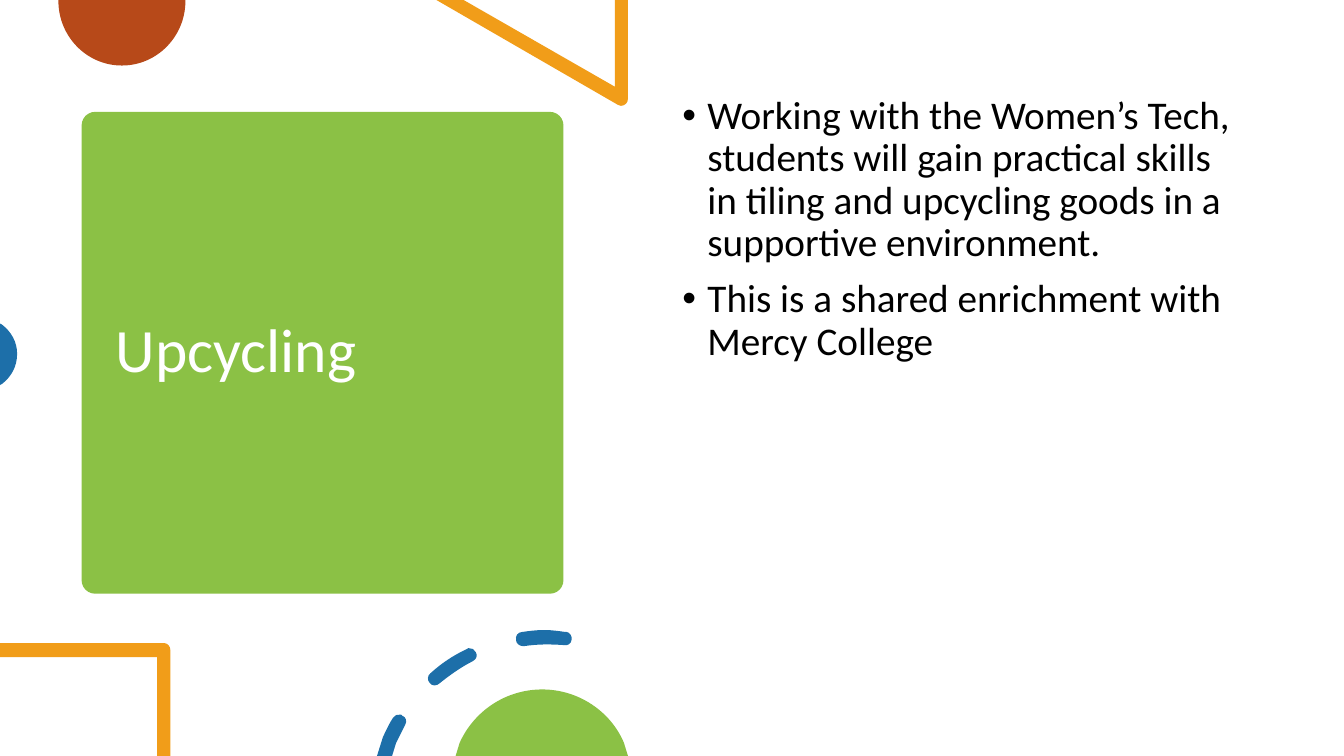
from lxml import etree
from pptx import Presentation
from pptx.dml.color import RGBColor
from pptx.enum.shapes import MSO_SHAPE
from pptx.enum.text import MSO_ANCHOR
from pptx.oxml.ns import qn
from pptx.util import Emu, Pt

ROUNDED = MSO_SHAPE.ROUNDED_RECTANGLE
TOP = MSO_ANCHOR.TOP
MIDDLE = MSO_ANCHOR.MIDDLE

PX = 9144
SLIDE_WIDTH = 12192000
COLORS = {
    "green": "8BC145",
    "rust": "B74919",
    "orange": "F19D19",
    "blue": "1D6FA9",
    "white": "FFFFFF",
    "black": "000000",
}


class SlideBuilder:
    font = "Calibri"
    line_spacing = 0.9

    def __init__(self, slide):
        self.shapes = slide.shapes

    def paint(self, shape, color):
        shape.shadow.inherit = False
        shape.fill.solid()
        shape.fill.fore_color.rgb = RGBColor.from_string(COLORS[color])
        shape.line.fill.background()

    def panel(self, box, color, rounding):
        panel = self.shapes.add_shape(ROUNDED, *(Emu(v * PX) for v in box))
        panel.adjustments[0] = rounding
        self.paint(panel, color)

    def outline(self, color, *contours):
        builder = None
        for contour in contours:
            start, *ends = [(x * PX, y * PX) for *_, x, y in contour]
            if builder is None:
                builder = self.shapes.build_freeform(*start, scale=1.0)
            else:
                builder.move_to(*start)
            builder.add_line_segments(ends, close=True)
        shape = builder.convert_to_shape()
        self.curve(shape, [step for contour in contours for step in contour[1:]])
        self.paint(shape, color)

    def curve(self, shape, steps):
        segments = list(shape._element.iter(qn("a:lnTo")))
        for segment, step in zip(segments, steps):
            if len(step) == 2:
                continue
            segment.tag = qn("a:cubicBezTo")
            controls = [
                etree.Element(
                    qn("a:pt"),
                    x=str(x * PX - shape.left),
                    y=str(y * PX - shape.top),
                )
                for x, y in (step[:2], step[2:4])
            ]
            segment[0:0] = controls

    def text(self, box, lines, size, color, anchor=TOP, bullets=False):
        frame = self.shapes.add_textbox(*(Emu(v * PX) for v in box)).text_frame
        frame.word_wrap = True
        frame.vertical_anchor = anchor
        frame.text = "\n".join(lines)
        for paragraph in frame.paragraphs:
            paragraph.line_spacing = self.line_spacing
            paragraph.font.name = self.font
            paragraph.font.size = Pt(size)
            paragraph.font.color.rgb = RGBColor.from_string(COLORS[color])
            if bullets:
                paragraph.space_before = Pt(10)
                self.bullet(paragraph)

    def bullet(self, paragraph):
        properties = paragraph._p.get_or_add_pPr()
        properties.set("marL", str(25 * PX))
        properties.set("indent", str(-25 * PX))
        mark_font = etree.Element(qn("a:buFont"), typeface="Arial")
        mark = etree.Element(qn("a:buChar"), char="•")
        position = list(properties).index(properties.find(qn("a:defRPr")))
        properties[position:position] = [mark_font, mark]


def main():
    deck = Presentation()
    deck.slide_width = Emu(SLIDE_WIDTH)
    deck.slide_height = Emu(750 * PX)
    page = SlideBuilder(deck.slides.add_slide(deck.slide_layouts[6]))

    page.panel((81, 111, 478, 478), "green", 0.028)
    page.text((105, 122, 431, 456), ["Upcycling"], 44, "white", anchor=MIDDLE)

    page.outline("rust", [
        (184, 0), (58, 0), (58, 1),
        (58, 36, 86, 65, 121, 65), (156, 65, 184, 36, 184, 1),
    ])
    page.outline("orange", [
        (623, 0), (610, 0), (610, 86), (460, 0), (433, 0), (613, 104),
        (614, 105, 615, 105, 616, 105), (620, 105, 623, 102, 623, 98),
    ])
    page.outline("blue", [
        (0, 321), (0, 382), (2, 381),
        (11, 374, 17, 364, 17, 351), (17, 339, 11, 329, 2, 322),
    ])

    page.text((667, 90, 575, 535), [
        "Working with the Women’s Tech, students will gain practical skills "
        "in tiling and upcycling goods in a supportive environment.",
        "This is a shared enrichment with Mercy College",
    ], 28, "black", bullets=True)

    page.outline("orange", [
        (163, 638), (0, 638), (0, 652), (156, 652), (156, 750), (169, 750),
        (169, 645), (169, 641, 166, 638, 163, 638),
    ])
    lower_dash = [
        (397, 709), (394, 708, 392, 710, 390, 712),
        (386, 718, 383, 725, 380, 731), (374, 750), (389, 750), (393, 737),
        (396, 731, 399, 725, 402, 719), (404, 716, 403, 711, 399, 710),
        (399, 709, 398, 709, 397, 709),
    ]
    middle_dash = [
        (465, 643), (465, 643, 464, 643, 463, 644),
        (450, 650, 438, 658, 427, 668), (424, 670, 424, 675, 426, 677),
        (427, 679, 429, 680, 431, 680), (433, 680, 435, 679, 436, 678),
        (446, 670, 457, 662, 469, 656), (473, 654, 474, 650, 472, 647),
        (471, 644, 468, 643, 465, 643),
    ]
    upper_dash = [
        (540, 625), (532, 625, 525, 626, 518, 627),
        (514, 627, 511, 631, 512, 635), (512, 638, 515, 641, 519, 641),
        (519, 641, 519, 641, 520, 641), (533, 639, 546, 639, 560, 640),
        (563, 641, 567, 638, 567, 635), (568, 631, 565, 627, 562, 627),
        (562, 627, 561, 627, 561, 627), (554, 626, 547, 625, 540, 625),
    ]
    page.outline("blue", lower_dash, middle_dash, upper_dash)
    page.outline("green", [
        (538, 684), (501, 684, 470, 706, 456, 737), (452, 750), (623, 750),
        (619, 737), (606, 706, 574, 684, 538, 684),
    ])

    deck.save("out.pptx")


if __name__ == "__main__":
    main()
